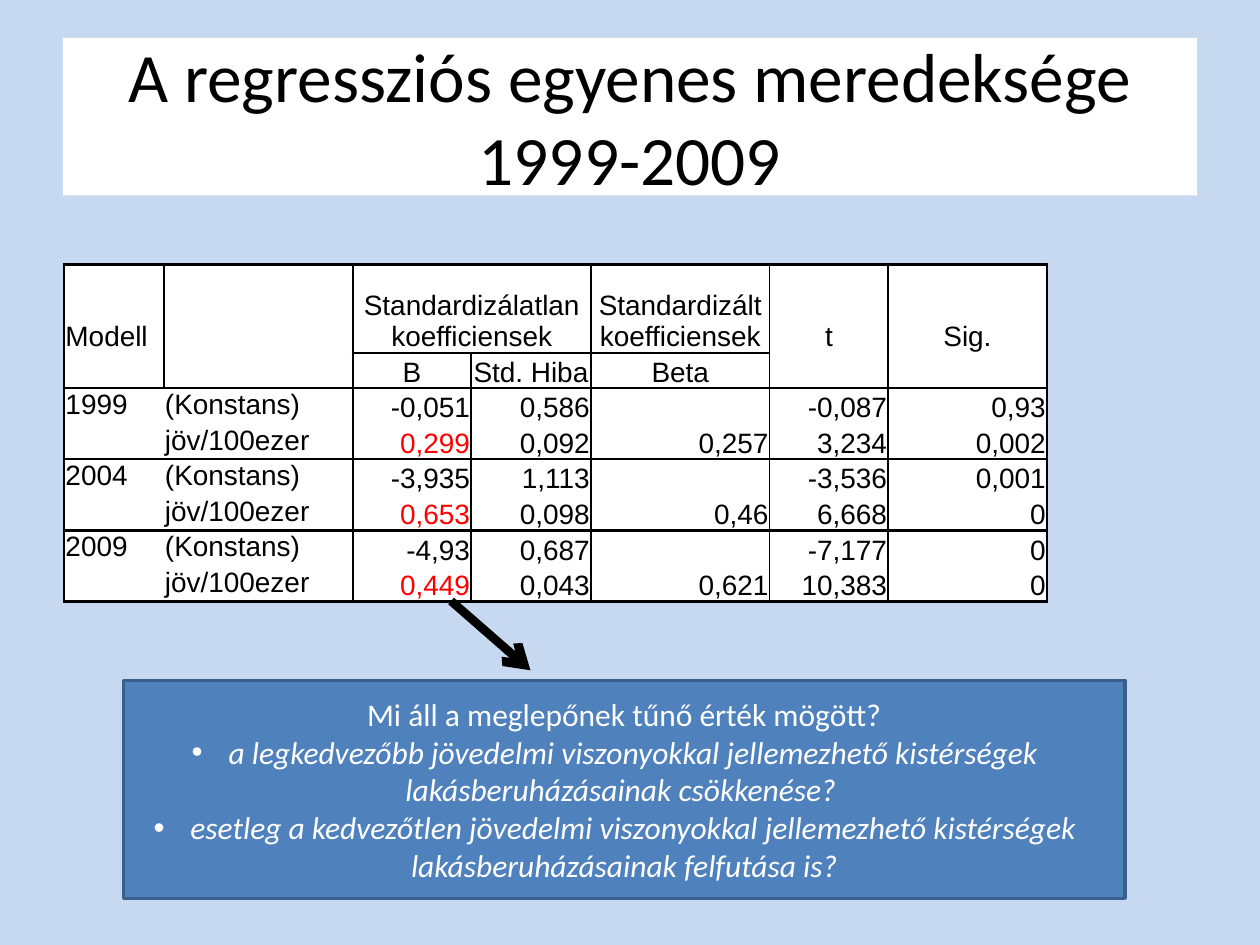
"""Build the slide on the slope of the regression line, 1999-2009."""
import pptx
import pptx.dml.color
import pptx.enum.shapes
import pptx.enum.text
import pptx.oxml
import pptx.oxml.ns
import pptx.util

Inches, Pt = pptx.util.Inches, pptx.util.Pt
ALIGN = pptx.enum.text.PP_ALIGN
ANCHOR = pptx.enum.text.MSO_ANCHOR

COLORS = {
    "background": "C6D9F1", "white": "FFFFFF", "black": "000000",
    "highlight": "FF0000", "box": "4F81BD", "box_line": "3A5F8C",
}
TITLE = "A regressziós egyenes meredeksége 1999-2009"
QUESTION = "Mi áll a meglepőnek tűnő érték mögött?"
ANSWERS = [
    " a legkedvezőbb jövedelmi viszonyokkal jellemezhető kistérségek lakásberuházásainak csökkenése? ",
    " esetleg a kedvezőtlen jövedelmi viszonyokkal jellemezhető kistérségek lakásberuházásainak felfutása is?",
]
ROWS = [
    ["Modell", "", "Standardizálatlan koefficiensek", "", "Standardizált koefficiensek", "t", "Sig."],
    ["", "", "B", "Std. Hiba", "Beta", "", ""],
    ["1999", "(Konstans)", "-0,051", "0,586", "", "-0,087", "0,93"],
    ["", "jöv/100ezer", "0,299", "0,092", "0,257", "3,234", "0,002"],
    ["2004", "(Konstans)", "-3,935", "1,113", "", "-3,536", "0,001"],
    ["", "jöv/100ezer", "0,653", "0,098", "0,46", "6,668", "0"],
    ["2009", "(Konstans)", "-4,93", "0,687", "", "-7,177", "0"],
    ["", "jöv/100ezer", "0,449", "0,043", "0,621", "10,383", "0"],
]
COLUMN_WIDTHS = [0.79, 1.5, 0.94, 0.95, 1.42, 0.94, 1.26]
ROW_HEIGHTS = [0.7] + [0.22] * 7
HEADER_ROWS, LABEL_COLUMNS, SLOPE_COLUMN = 2, 2, 2
CELL_FORMAT = {
    "margin_left": Inches(0.01), "margin_right": Inches(0.01),
    "margin_top": Inches(0.01), "margin_bottom": 0,
}
THICK, THIN = 1.5, 1


def rgb(name):
    return pptx.dml.color.RGBColor.from_string(COLORS[name])


def set_values(target, values):
    for name, value in values.items():
        setattr(target, name, value)


def add_text(para, text, align, color, **font):
    para.alignment = align
    span = para.add_run()
    span.text = text
    set_values(span.font, font)
    span.font.color.rgb = rgb(color)


def add_box(page, place, fill):
    box = page.shapes.add_shape(
        pptx.enum.shapes.MSO_SHAPE.RECTANGLE, *map(Inches, place))
    box.shadow.inherit = False
    box.fill.solid()
    box.fill.fore_color.rgb = rgb(fill)
    set_values(box.text_frame, {"word_wrap": True, "vertical_anchor": ANCHOR.MIDDLE})
    return box


def vertical_edge(row, edge):
    if edge == 1 and row >= HEADER_ROWS or edge == 3 and row == 0:
        return 0
    return THICK if edge in (0, 1, 2, len(COLUMN_WIDTHS)) else THIN


def horizontal_edge(edge, column):
    if edge == 1:
        return THIN if 2 <= column <= 4 else 0
    return THICK if edge % 2 == 0 else 0


def set_borders(cell, row, column):
    widths = {
        "lnL": vertical_edge(row, column), "lnR": vertical_edge(row, column + 1),
        "lnT": horizontal_edge(row, column), "lnB": horizontal_edge(row + 1, column),
    }
    properties = cell._tc.get_or_add_tcPr()
    for position, (tag, width) in enumerate(widths.items()):
        paint = (f'<a:solidFill><a:srgbClr val="{COLORS["black"]}"/></a:solidFill>'
                 if width else "<a:noFill/>")
        properties.insert(position, pptx.oxml.parse_xml(
            f'<a:{tag} {pptx.oxml.ns.nsdecls("a")} w="{Pt(width)}">{paint}</a:{tag}>'))


def fill_cell(cell, row, column, text):
    is_label = column < LABEL_COLUMNS
    is_header = row < HEADER_ROWS
    set_values(cell, CELL_FORMAT)
    cell.vertical_anchor = ANCHOR.TOP if is_label and not is_header else ANCHOR.BOTTOM
    cell.fill.solid()
    cell.fill.fore_color.rgb = rgb("white")
    set_borders(cell, row, column)
    para = cell.text_frame.paragraphs[0]
    if text:
        align = ALIGN.LEFT if is_label else ALIGN.CENTER if is_header else ALIGN.RIGHT
        is_slope = column == SLOPE_COLUMN and ROWS[row][1].startswith("jöv")
        add_text(para, text, align, "highlight" if is_slope else "black",
                 name="Arial", size=Pt(16))
    else:
        para._p.append(pptx.oxml.parse_xml(
            f'<a:endParaRPr {pptx.oxml.ns.nsdecls("a")} sz="1600"/>'))


def add_coefficients(page):
    frame = page.shapes.add_table(
        len(ROWS), len(COLUMN_WIDTHS), *map(Inches, (0.51, 2.1, 7.8, 2.64)))
    table = frame.table
    set_values(table, {"first_row": False, "horz_banding": False})
    for column, width in zip(table.columns, COLUMN_WIDTHS):
        column.width = Inches(width)
    for row, height in zip(table.rows, ROW_HEIGHTS):
        row.height = Inches(height)
    for row, texts in enumerate(ROWS):
        for column, text in enumerate(texts):
            fill_cell(table.cell(row, column), row, column, text)
    table.cell(0, 2).merge(table.cell(0, 3))


def add_questions(page):
    box = add_box(page, (0.98, 5.4, 7.95, 1.73), "box")
    box.line.color.rgb = rgb("box_line")
    box.line.width = Pt(2)
    font = {"name": "Calibri", "size": Pt(18)}
    add_text(box.text_frame.paragraphs[0], QUESTION, ALIGN.CENTER, "white", **font)
    for answer in ANSWERS:
        para = box.text_frame.add_paragraph()
        add_text(para, answer, ALIGN.CENTER, "white", italic=True, **font)
        properties = para._p.get_or_add_pPr()
        for bullet in ('buFont {} typeface="Arial"', 'buChar {} char="•"'):
            properties.append(pptx.oxml.parse_xml(
                f'<a:{bullet.format(pptx.oxml.ns.nsdecls("a"))}/>'))


def add_arrow(page):
    arrow = page.shapes.add_connector(
        pptx.enum.shapes.MSO_CONNECTOR.STRAIGHT, *map(Inches, (3.58, 4.77, 4.21, 5.32)))
    arrow.line.color.rgb = rgb("black")
    arrow.line.width = Pt(5)
    namespace = pptx.oxml.ns.nsdecls("a")
    arrow.line._get_or_add_ln().append(
        pptx.oxml.parse_xml(f'<a:tailEnd {namespace} type="arrow"/>'))
    arrow._element.spPr.append(pptx.oxml.parse_xml(f"<a:effectLst {namespace}/>"))


def main():
    deck = pptx.Presentation()
    set_values(deck, {"slide_width": Inches(10), "slide_height": Inches(7.5)})
    page = deck.slides.add_slide(deck.slide_layouts[6])
    page.background.fill.solid()
    page.background.fill.fore_color.rgb = rgb("background")
    title = add_box(page, (0.5, 0.3, 9, 1.25), "white")
    title.line.fill.background()
    add_text(title.text_frame.paragraphs[0], TITLE, ALIGN.CENTER, "black",
             name="Calibri", size=Pt(39.6))
    add_coefficients(page)
    add_questions(page)
    add_arrow(page)
    deck.save("out.pptx")


if __name__ == "__main__":
    main()
